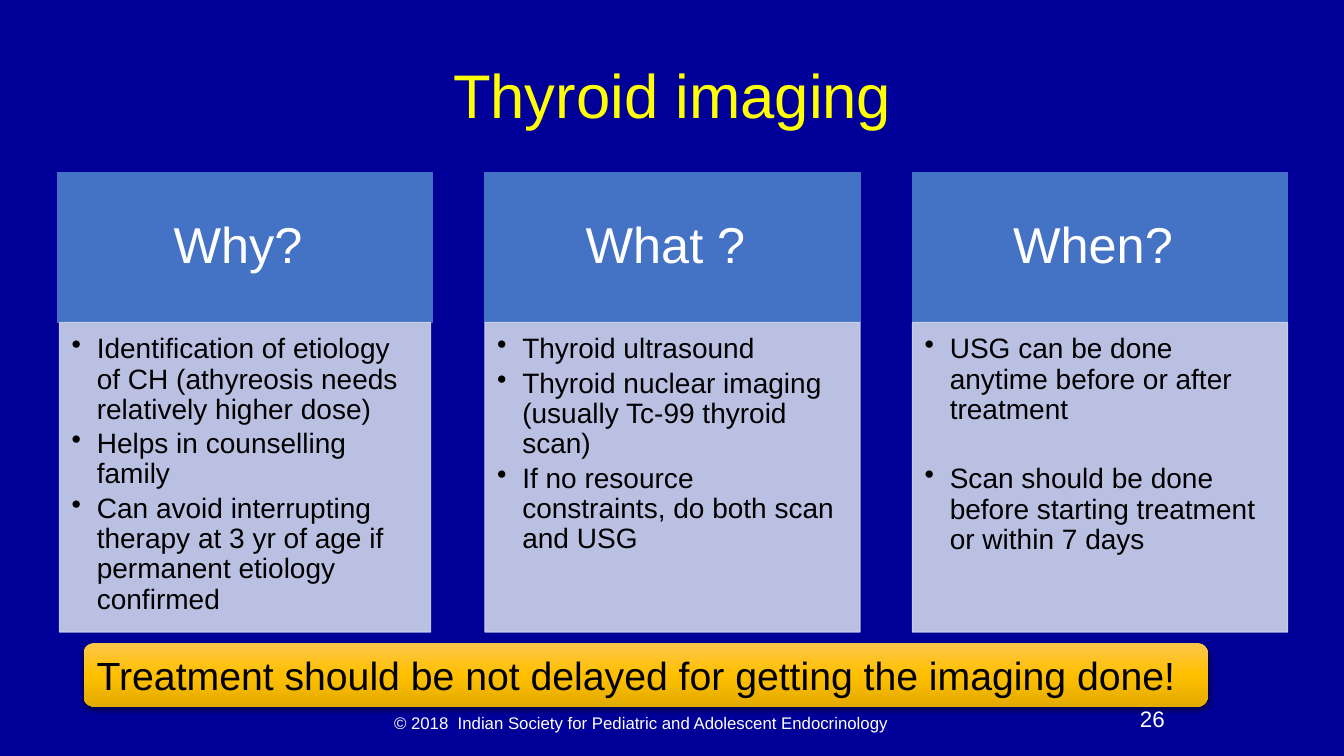
from pptx import Presentation
from pptx.dml.color import RGBColor
from pptx.enum.shapes import MSO_SHAPE as Preset
from pptx.enum.text import MSO_ANCHOR as Anchor, MSO_AUTO_SIZE as AutoSize, PP_ALIGN as Align
from pptx.oxml import parse_xml
from pptx.oxml.ns import nsdecls, qn
from pptx.util import Pt

PX = 9144
NAVY = RGBColor(0x00, 0x00, 0x99)
YELLOW = RGBColor(0xFF, 0xFF, 0x00)
WHITE = RGBColor(0xFF, 0xFF, 0xFF)
BLACK = RGBColor(0x00, 0x00, 0x00)
BLUE = RGBColor(0x44, 0x72, 0xC4)
PALE_BLUE = RGBColor(0xCF, 0xD5, 0xEA)
GOLD_STOPS = [
    (0, RGBColor(0xFF, 0xC6, 0x4B)),
    (50, RGBColor(0xFF, 0xC0, 0x00)),
    (100, RGBColor(0xE3, 0xAB, 0x00)),
]

COLUMN_PITCH = 424
HEADER_HEIGHT = 149
BULLET_GAP = 3
WIDE_GAP = 28
COLUMNS = [
    ("Why? ", 2, BULLET_GAP, [
        "Identification of etiology of CH (athyreosis needs relatively higher dose)",
        "Helps in counselling family",
        "Can avoid interrupting therapy at 3 yr of age if permanent etiology confirmed",
    ]),
    ("What ? ", 0, BULLET_GAP, [
        "Thyroid ultrasound",
        "Thyroid nuclear imaging (usually Tc-99 thyroid scan)",
        "If no resource constraints, do both scan and USG",
    ]),
    ("When? ", 0, WIDE_GAP, [
        "USG can be done anytime before or after treatment",
        "Scan should be done before starting treatment or within 7 days",
    ]),
]


def scale(*lengths):
    return [length * PX for length in lengths]


def write_text(shape, texts, size, color, align=Align.LEFT, anchor=Anchor.TOP,
               insets=(10, 5, 10, 5), line_spacing=None, gap=0, bullet=False, wrap=True):
    frame = shape.text_frame
    frame.word_wrap = wrap
    frame.vertical_anchor = anchor
    (frame.margin_left, frame.margin_top,
     frame.margin_right, frame.margin_bottom) = scale(*insets)
    for index, text in enumerate(texts):
        paragraph = frame.paragraphs[0] if index == 0 else frame.add_paragraph()
        paragraph.alignment = align
        paragraph.line_spacing = line_spacing
        paragraph.space_after = Pt(gap)
        if bullet:
            properties = paragraph._p.get_or_add_pPr()
            properties.set("marL", str(25 * PX))
            properties.set("indent", str(-25 * PX))
            properties.append(parse_xml(f'<a:buChar {nsdecls("a")} char="•"/>'))
        run = paragraph.add_run()
        run.text = text
        run.font.name = "Arial"
        run.font.size = Pt(size)
        run.font.color.rgb = color


def add_label(slide, box, text, size, color, **text_format):
    shape = slide.shapes.add_textbox(*scale(*box))
    write_text(shape, [text], size, color, align=Align.CENTER, **text_format)


def add_panel(slide, box, color, opacity=100):
    shape = slide.shapes.add_shape(Preset.RECTANGLE, *scale(*box))
    shape.shadow.inherit = False
    shape.fill.solid()
    shape.fill.fore_color.rgb = color
    shape.line.color.rgb = color
    shape.line.width = Pt(1)
    if opacity < 100:
        for tint in shape.element.spPr.iter(qn("a:srgbClr")):
            tint.append(parse_xml(f'<a:alpha {nsdecls("a")} val="{opacity * 1000}"/>'))
    return shape


def add_column(slide, box, heading, body_inset, gap, bullets):
    left, top, width, height = box
    header = add_panel(slide, (left, top, width, HEADER_HEIGHT), BLUE)
    write_text(header, [heading], 36, WHITE, align=Align.CENTER, anchor=Anchor.MIDDLE,
               insets=(28, 16, 28, 16), line_spacing=0.9)
    body_box = (left + body_inset, top + HEADER_HEIGHT,
                width - 2 * body_inset, height - HEADER_HEIGHT)
    body = add_panel(slide, body_box, PALE_BLUE, opacity=90)
    write_text(body, bullets, 20, BLACK, insets=(12, 12, 16, 17),
               line_spacing=0.9, gap=gap, bullet=True)


def add_banner(slide, box, text):
    shape = slide.shapes.add_shape(Preset.ROUNDED_RECTANGLE, *scale(*box))
    shape.line.fill.background()
    shape.fill.gradient()
    shape.fill.gradient_angle = 270
    properties = shape.element.spPr
    stops = properties.find(qn("a:gradFill")).find(qn("a:gsLst"))
    for stop in list(stops):
        stops.remove(stop)
    for position, color in GOLD_STOPS:
        stops.append(parse_xml(
            f'<a:gs {nsdecls("a")} pos="{position * 1000}"><a:srgbClr val="{color}"/></a:gs>'))
    shape.shadow.inherit = False
    properties.find(qn("a:effectLst")).append(parse_xml(
        f'<a:outerShdw {nsdecls("a")} blurRad="{Pt(4.5)}" dist="{Pt(1.5)}" dir="5400000" '
        f'rotWithShape="0"><a:srgbClr val="{BLACK}"><a:alpha val="63000"/></a:srgbClr>'
        '</a:outerShdw>'))
    write_text(shape, [text], 28, BLACK, wrap=False)
    shape.text_frame.auto_size = AutoSize.SHAPE_TO_FIT_TEXT


def add_footer(slide, box):
    left, top, width, height = box
    add_label(slide, (left, top, 518, height),
              "© 2018  Indian Society for Pediatric and Adolescent Endocrinology",
              12, WHITE, anchor=Anchor.MIDDLE)
    add_label(slide, (left + width - 300, top, 300, 40), "26", 16, WHITE)


def main():
    presentation = Presentation()
    presentation.slide_width, presentation.slide_height = scale(1333, 750)
    slide = presentation.slides.add_slide(presentation.slide_layouts[6])
    slide.background.fill.solid()
    slide.background.fill.fore_color.rgb = NAVY
    add_label(slide, (92, 25, 1150, 145), "Thyroid imaging", 44, YELLOW,
              anchor=Anchor.MIDDLE, line_spacing=0.9)
    for index, column in enumerate(COLUMNS):
        add_column(slide, (57 + index * COLUMN_PITCH, 171, 372, 456), *column)
    add_banner(slide, (83, 638, 1115, 63),
               "Treatment should be not delayed for getting the imaging done!")
    add_footer(slide, (377, 695, 916, 45))
    presentation.save("out.pptx")


if __name__ == "__main__":
    main()
